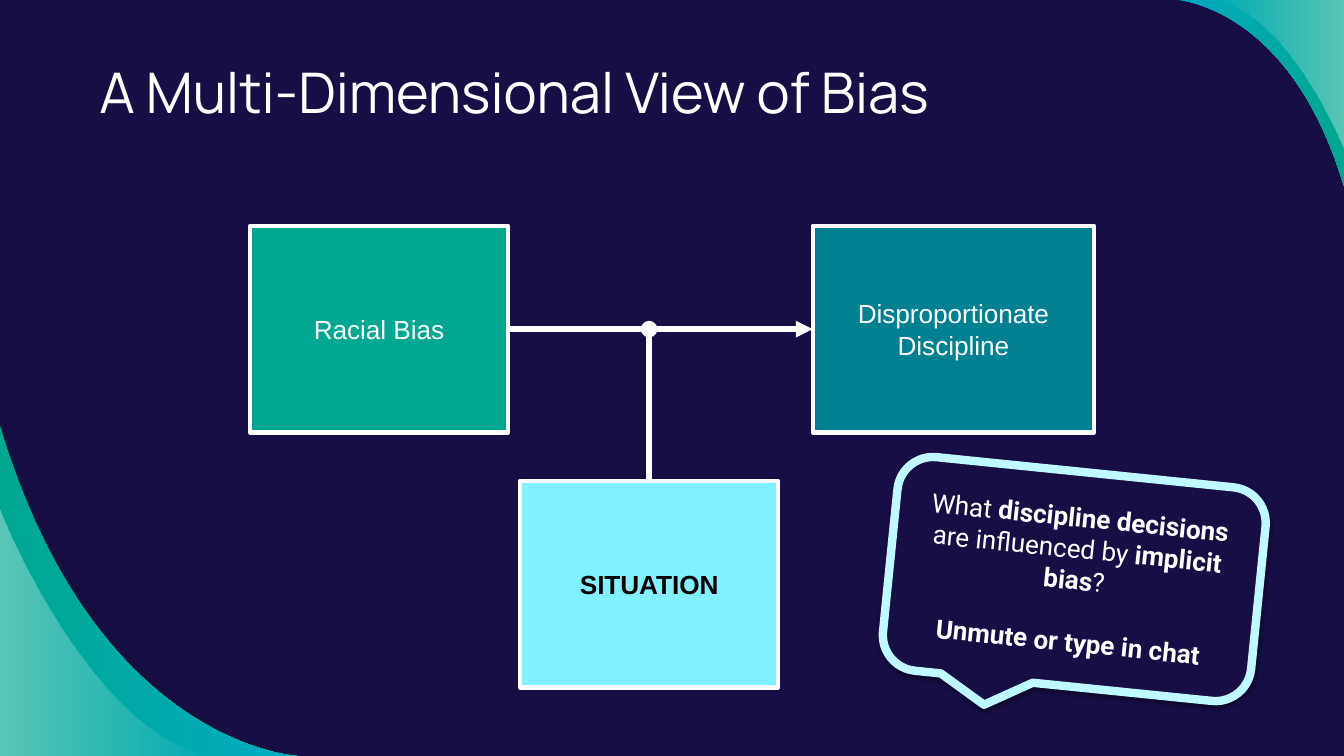
import pptx
import pptx.dml.color
import pptx.enum.shapes
import pptx.enum.text
import pptx.oxml
import pptx.oxml.ns
import pptx.util

RGBColor = pptx.dml.color.RGBColor
NAVY = RGBColor(0x16, 0x0E, 0x44)
SHADE = RGBColor(0x12, 0x10, 0x2F)
CYAN = RGBColor(0x00, 0xAC, 0xC2)
GREEN = RGBColor(0x00, 0xA7, 0x91)
TEAL = RGBColor(0x00, 0x81, 0x92)
AQUA = RGBColor(0x81, 0xF1, 0xFF)
ICE = RGBColor(0xC0, 0xF8, 0xFF)
WHITE = RGBColor(0xFF, 0xFF, 0xFF)
BLACK = RGBColor(0x00, 0x00, 0x00)

WIDTH = pptx.util.Inches(13.33)
HEIGHT = pptx.util.Inches(7.5)
BODY_SIZE = pptx.util.Pt(18.67)
SHAPES = pptx.enum.shapes.MSO_SHAPE
CENTER = pptx.enum.text.PP_ALIGN.CENTER
NAMESPACE = pptx.oxml.ns.nsdecls("a")

# Bezier controls of a sweep from the top left to the bottom right of its box
WIDE_SWEEP = [(0.32, 0.97), (1, 1), (1, 1)]
GLAZE_SWEEP = [(0, 0), (0.42, 0.94), (1, 1)]


def grid(left, top, width, height, box=(0, 0, WIDTH, HEIGHT)):
    """Place a part on a grid of 100 columns and 100 rows laid over a box."""
    return (round(box[0] + left * box[2] / 100), round(box[1] + top * box[3] / 100),
            round(width * box[2] / 100), round(height * box[3] / 100))


def effect_list(inner=""):
    return pptx.oxml.parse_xml(f"<a:effectLst {NAMESPACE}>{inner}</a:effectLst>")


def add_sweep(page, box, controls, turned, colors, alphas):
    """Fill a corner under a curve; colors run from the inner to the outer side."""
    left, top, width, height = box

    def place(point):
        x, y = (1 - point[0], 1 - point[1]) if turned else point
        return round(x * width), round(y * height)

    start, end, corner = [(left + x, top + y) for x, y in map(place, [(0, 0), (1, 1), (0, 1)])]
    builder = page.shapes.build_freeform(*start, scale=1.0)
    builder.add_line_segments([end, corner], close=True)
    sweep = builder.convert_to_shape()

    # Bend the first side into the curve
    side = sweep._element.spPr.find(".//" + pptx.oxml.ns.qn("a:lnTo"))
    points = "".join(f'<a:pt x="{x}" y="{y}"/>' for x, y in map(place, controls))
    side.getparent().replace(side, pptx.oxml.parse_xml(
        f"<a:cubicBezTo {NAMESPACE}>{points}</a:cubicBezTo>"))

    sweep.shadow.inherit = False
    sweep.line.fill.background()
    if len(colors) == 1:
        sweep.fill.solid()
        sweep.fill.fore_color.rgb = colors[0]
    else:
        sweep.fill.gradient()
        sweep.fill.gradient_angle = 0
        for stop, color in zip(sweep.fill.gradient_stops, colors if turned else colors[::-1]):
            stop.color.rgb = color
    color_elements = sweep._element.spPr.findall(".//" + pptx.oxml.ns.qn("a:srgbClr"))
    for element, alpha in zip(color_elements, alphas if turned else alphas[::-1]):
        element.append(pptx.oxml.parse_xml(f'<a:alpha {NAMESPACE} val="{alpha * 1000}"/>'))


def add_corner(page, turned, band_size, glaze_size, shade_size=None):
    """Place a corner's layers: lower left, or upper right when turned."""
    layers = [(band_size, WIDE_SWEEP, [CYAN, GREEN], []),
              (glaze_size, GLAZE_SWEEP, [WHITE, WHITE], [0, 36])]
    if shade_size:
        layers.insert(0, (shade_size, WIDE_SWEEP, [SHADE], [54]))
    for (width, height), controls, colors, alphas in layers:
        left, top = (100 - width, 0) if turned else (0, 100 - height)
        add_sweep(page, grid(left, top, width, height), controls, turned, colors, alphas)


def style_font(font, name, size, color, bold=False):
    font.name = name
    font.size = size
    font.color.rgb = color
    font.bold = bold


def add_title(page, box, text):
    title = page.shapes.title
    title.left, title.top, title.width, title.height = box
    frame = title.text_frame
    frame.text = text
    frame.word_wrap = True
    frame.auto_size = pptx.enum.text.MSO_AUTO_SIZE.NONE
    frame.vertical_anchor = pptx.enum.text.MSO_ANCHOR.TOP
    frame.margin_left = frame.margin_right = pptx.util.Inches(0.1)
    frame.margin_top = frame.margin_bottom = pptx.util.Inches(0.06)
    para = frame.paragraphs[0]
    para.alignment = pptx.enum.text.PP_ALIGN.LEFT
    style_font(para.runs[0].font, "Manrope", pptx.util.Pt(40), WHITE)


def add_panel(page, box, kind, fill, outline, outline_width):
    panel = page.shapes.add_shape(kind, *box)
    panel.shadow.inherit = False
    panel.fill.solid()
    panel.fill.fore_color.rgb = fill
    panel.line.color.rgb = outline
    panel.line.width = pptx.util.Pt(outline_width)
    panel.text_frame.word_wrap = True
    panel.text_frame.vertical_anchor = pptx.enum.text.MSO_ANCHOR.MIDDLE
    return panel


def add_factor(page, box, text, fill, color=WHITE, bold=False):
    factor = add_panel(page, box, SHAPES.RECTANGLE, fill, WHITE, 3)
    factor.text_frame.text = text
    para = factor.text_frame.paragraphs[0]
    para.alignment = CENTER
    style_font(para.runs[0].font, "Arial", BODY_SIZE, color, bold)
    return factor


def add_link(page, start, end, head):
    link = page.shapes.add_connector(
        pptx.enum.shapes.MSO_CONNECTOR.STRAIGHT, *start, *end)
    link.line.color.rgb = WHITE
    link.line.width = pptx.util.Pt(4)
    link.line._get_or_add_ln().append(pptx.oxml.parse_xml(
        f'<a:tailEnd {NAMESPACE} type="{head}"/>'))
    link._element.spPr.append(effect_list())
    return link


def add_diagram(page, box):
    """Two factors joined by an arrow, with the situation acting on the arrow."""
    cause = add_factor(page, grid(0, 0, 30.58, 44.76, box), "Racial Bias", GREEN)
    effect = add_factor(page, grid(66.67, 0, 33.33, 44.76, box),
                        "Disproportionate Discipline", TEAL)
    situation = add_factor(page, grid(32, 55.24, 30.58, 44.76, box),
                           "SITUATION", AQUA, BLACK, True)

    level = cause.top + cause.height // 2
    arrow = add_link(page, (cause.left + cause.width, level), (effect.left, level), "triangle")
    arrow.begin_connect(cause, 3)
    arrow.end_connect(effect, 1)
    middle = situation.left + situation.width // 2
    stem = add_link(page, (middle, situation.top), (middle, level), "oval")
    stem.begin_connect(situation, 0)


def add_callout(page, box, paragraphs):
    callout = add_panel(page, box, SHAPES.ROUNDED_RECTANGULAR_CALLOUT, NAVY, ICE, 6)
    callout.rotation = 5.8
    properties = callout._element.spPr
    properties.remove(properties.find(pptx.oxml.ns.qn("a:effectLst")))
    properties.append(effect_list(
        '<a:outerShdw blurRad="39370" dist="20320" dir="5400000" rotWithShape="0">'
        '<a:srgbClr val="000000"><a:alpha val="38000"/></a:srgbClr></a:outerShdw>'))
    frame = callout.text_frame
    for index, spans in enumerate(paragraphs):
        para = frame.add_paragraph() if index else frame.paragraphs[0]
        para.alignment = CENTER
        if index:
            para.space_before = pptx.util.Pt(22)
        for text, bold in spans:
            span = para.add_run()
            span.text = text
            style_font(span.font, "Roboto", BODY_SIZE, WHITE, bold)


def main():
    deck = pptx.Presentation()
    deck.slide_width, deck.slide_height = WIDTH, HEIGHT
    page = deck.slides.add_slide(deck.slide_layouts.get_by_name("Title Only"))
    page.background.fill.solid()
    page.background.fill.fore_color.rgb = NAVY

    # Corner decoration
    add_corner(page, False, (22.13, 43.73), (16.2, 32.53), shade_size=(22.73, 44.93))
    add_corner(page, True, (12.45, 24.67), (9.9, 19.87))

    # Title, diagram and question
    add_title(page, grid(6.64, 6.8, 76.97, 12.27), "A Multi-Dimensional View of Bias")
    add_diagram(page, grid(18.6, 29.87, 62.8, 61.07))
    add_callout(page, grid(66.17, 62.4, 27.53, 28.4), [
        [("What ", False), ("discipline decisions ", True), ("are influenced by ", False),
         ("implicit bias", True), ("?", False)],
        [("Unmute or type in chat", True)]])

    deck.save("out.pptx")


if __name__ == "__main__":
    main()
